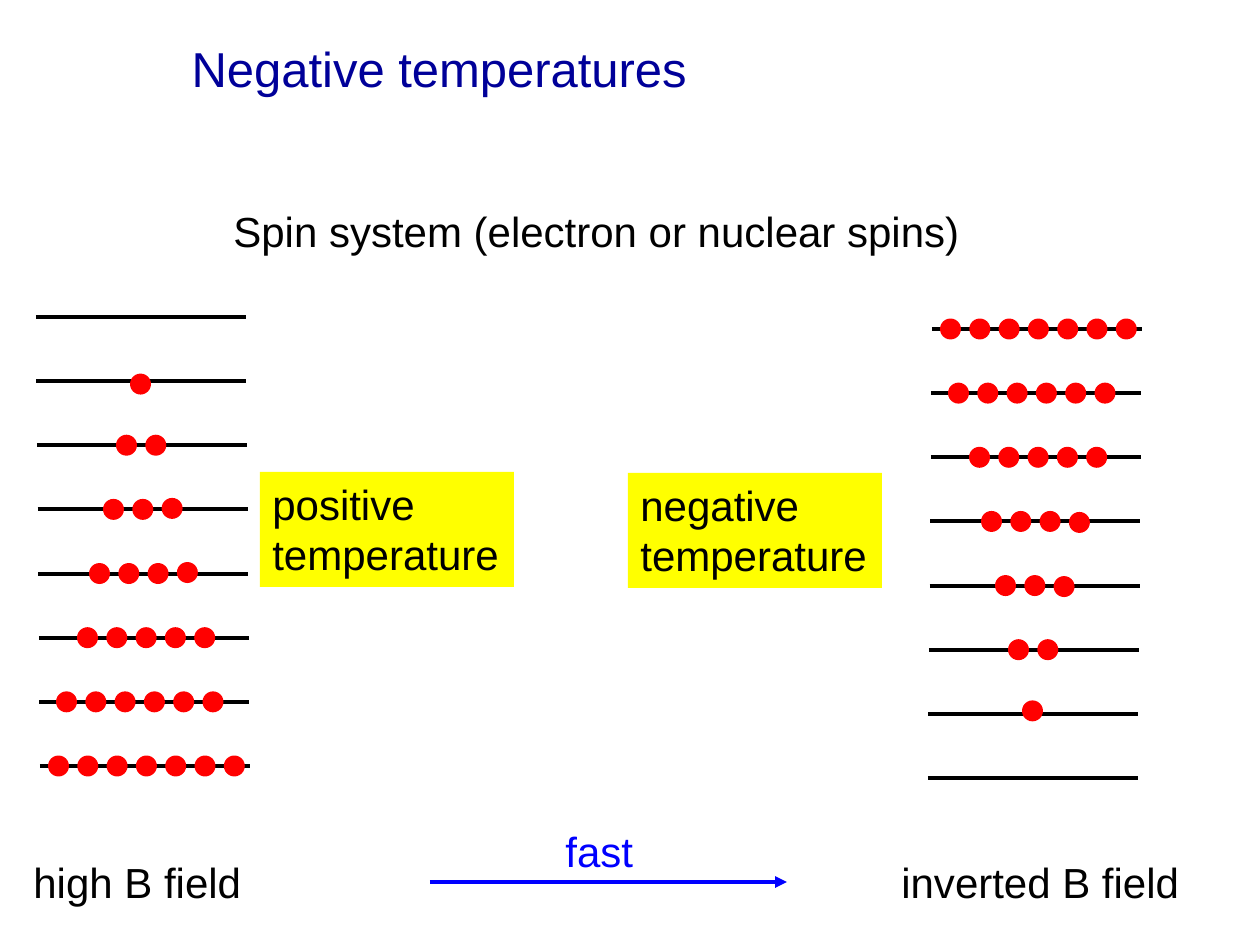
from dataclasses import dataclass

from lxml import etree
from pptx import Presentation
from pptx.dml.color import RGBColor
from pptx.enum.shapes import MSO_CONNECTOR, MSO_SHAPE
from pptx.enum.text import MSO_ANCHOR, MSO_AUTO_SIZE, PP_ALIGN
from pptx.oxml.ns import qn
from pptx.util import Emu, Pt

STRAIGHT = MSO_CONNECTOR.STRAIGHT
OVAL = MSO_SHAPE.OVAL
TOP = MSO_ANCHOR.TOP
LEFT = PP_ALIGN.LEFT
NO_FIT = MSO_AUTO_SIZE.NONE

PX_PER_INCH = 126
SLIDE_WIDTH, SLIDE_HEIGHT = 1260, 945

LEVEL_GAP = 64.15
LEVEL_LENGTH = 210
LEVEL_DRIFT = 0.6
SPIN_SIZE = 21
SPIN_PITCH = 29.3

# Per level, fullest first: spin count, indent of the first spin,
# and offset of the last spin away from the fullest level.
POPULATIONS = [
    (7, 8, 0), (6, 16, 0), (5, 37, 0), (4, 49, 1),
    (3, 63, 1), (2, 76, 0), (1, 90, -3), (0, 0, 0),
]


@dataclass(frozen=True)
class Theme:
    font: str = "Arial"
    title_size: int = 28
    body_size: int = 24
    line_width: float = 2.25
    title: RGBColor = RGBColor(0x00, 0x00, 0x99)
    ink: RGBColor = RGBColor(0x00, 0x00, 0x00)
    process: RGBColor = RGBColor(0x00, 0x00, 0xFF)
    spin: RGBColor = RGBColor(0xFF, 0x00, 0x00)
    highlight: RGBColor = RGBColor(0xFF, 0xFF, 0x00)


def px(length):
    return Emu(round(length * 914400 / PX_PER_INCH))


class SlideBuilder:
    def __init__(self, slide, theme):
        self.slide = slide
        self.theme = theme

    def add_run(self, paragraph, words, size, color):
        run = paragraph.add_run()
        run.text = words
        run.font.name = self.theme.font
        run.font.size = Pt(size)
        run.font.color.rgb = color

    def title(self, words, left, top, width, height):
        heading = self.slide.shapes.title
        heading.left, heading.top = px(left), px(top)
        heading.width, heading.height = px(width), px(height)
        frame = heading.text_frame
        frame.auto_size = NO_FIT
        frame.vertical_anchor = TOP
        paragraph = frame.paragraphs[0]
        paragraph.alignment = LEFT
        self.add_run(paragraph, words, self.theme.title_size, self.theme.title)

    def label(self, lines, left, top, width, height, color=None, fill=None):
        box = self.slide.shapes.add_textbox(
            px(left), px(top), px(width), px(height))
        if fill is not None:
            box.fill.solid()
            box.fill.fore_color.rgb = fill
        frame = box.text_frame
        frame.word_wrap = False
        paragraph = frame.paragraphs[0]
        for index, words in enumerate(lines):
            if index:
                paragraph.add_line_break()
            self.add_run(paragraph, words, self.theme.body_size,
                         color or self.theme.ink)

    def line(self, shapes, left, y, length, color):
        rule = shapes.add_connector(
            STRAIGHT, px(left), px(y), px(left + length), px(y))
        rule.line.color.rgb = color
        rule.line.width = Pt(self.theme.line_width)
        etree.SubElement(rule._element.spPr, qn("a:effectLst"))
        return rule

    def arrow(self, left, y, length, color):
        shaft = self.line(self.slide.shapes, left, y, length, color)
        etree.SubElement(shaft.line._get_or_add_ln(), qn("a:tailEnd"),
                         type="triangle")

    def spin(self, shapes, left, center_y):
        dot = shapes.add_shape(OVAL, px(left), px(center_y - SPIN_SIZE / 2),
                               px(SPIN_SIZE), px(SPIN_SIZE))
        dot.shadow.inherit = False
        dot.fill.solid()
        dot.fill.fore_color.rgb = self.theme.spin
        dot.line.fill.background()

    def ladder(self, left, y, direction):
        """Stack the levels from the fullest one; direction -1 goes up, 1 down."""
        shapes = self.slide.shapes.add_group_shape().shapes
        levels = [y + direction * LEVEL_GAP * rank
                  for rank in range(len(POPULATIONS))]
        for rank, level in enumerate(levels):
            self.line(shapes, left - LEVEL_DRIFT * rank, level,
                      LEVEL_LENGTH, self.theme.ink)
        for level, (count, indent, last_offset) in zip(levels, POPULATIONS):
            for index in range(count):
                offset = last_offset if index == count - 1 else 0
                self.spin(shapes, left + indent + SPIN_PITCH * index,
                          level + direction * offset)


def main():
    deck = Presentation()
    deck.slide_width, deck.slide_height = px(SLIDE_WIDTH), px(SLIDE_HEIGHT)
    theme = Theme()
    title_only = deck.slide_layouts[5]
    page = SlideBuilder(deck.slides.add_slide(title_only), theme)

    page.title("Negative temperatures", 179, 32, 914, 72)
    page.ladder(40, 766, -1)
    page.label(["Spin system (electron or nuclear spins)"], 221, 199, 829, 63)
    page.label(["high B field"], 21, 850, 236, 63)
    page.label(["inverted B field"], 889, 850, 318, 63)
    page.arrow(430, 882, 357, theme.process)
    page.label(["fast"], 553, 819, 93, 63, color=theme.process)
    page.ladder(932, 329, 1)
    page.label(["positive", "temperature"], 260, 472, 254, 115,
               fill=theme.highlight)
    page.label(["negative", "temperature"], 628, 473, 254, 115,
               fill=theme.highlight)

    deck.save("out.pptx")


if __name__ == "__main__":
    main()
